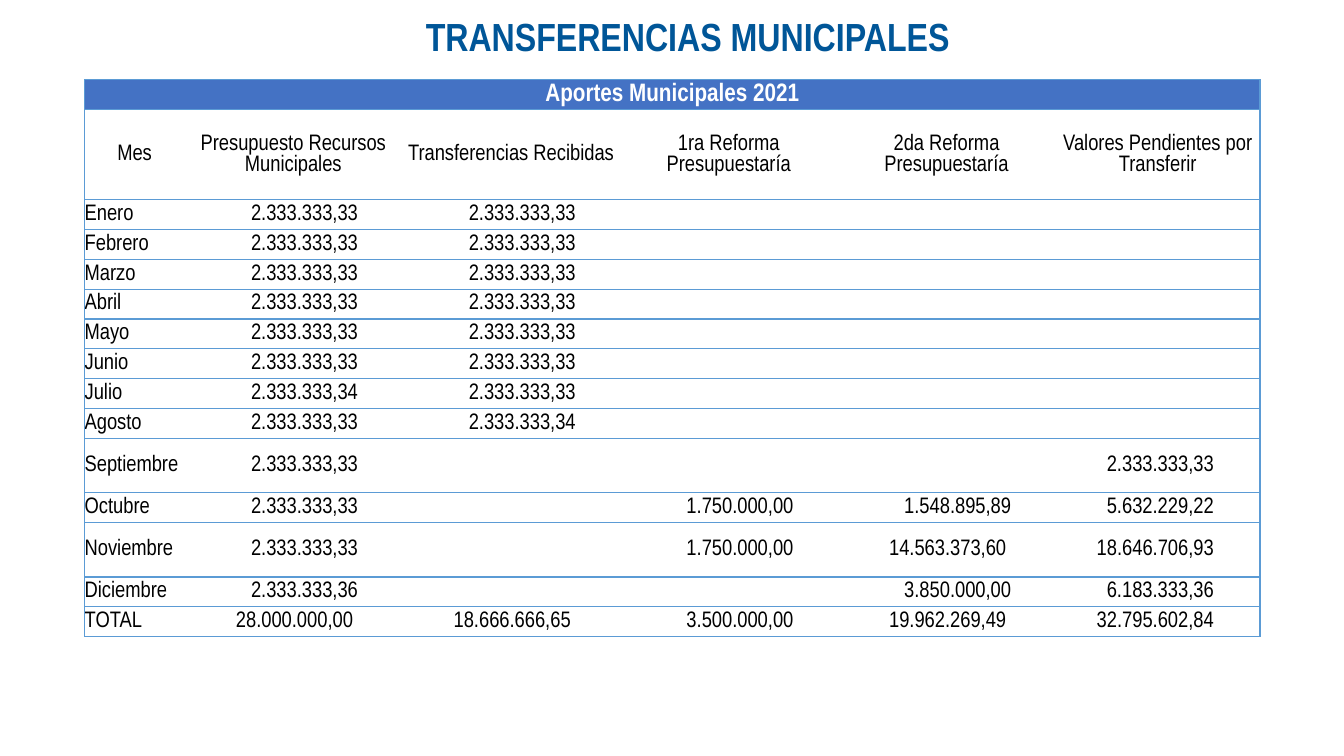
from pptx import Presentation
from pptx.dml.color import RGBColor
from pptx.enum.text import MSO_ANCHOR, MSO_AUTO_SIZE, PP_ALIGN
from pptx.oxml.ns import qn
from pptx.util import Inches, Pt
from lxml.etree import SubElement

NAVY = RGBColor(0x00, 0x56, 0x98)
BLUE = RGBColor(0x44, 0x72, 0xC4)
SKY = RGBColor(0x5B, 0x9B, 0xD5)
WHITE = RGBColor(0xFF, 0xFF, 0xFF)
BLACK = RGBColor(0x00, 0x00, 0x00)

# Shares of the slide's size, in percent
COLS = [7.43] + [16.2] * 4 + [15.23]
LOW, MID, TALL = 3.95, 7.2, 11.87

BAND = "Aportes Municipales 2021"
HEADS = ["Mes", "Presupuesto Recursos Municipales", "Transferencias Recibidas",
         "1ra Reforma Presupuestaría", "2da Reforma Presupuestaría",
         "Valores Pendientes por Transferir"]
PART = "2.333.333,33"
MONTHS = [
    *[[name, PART, PART, "", "", ""]
      for name in ("Enero", "Febrero", "Marzo", "Abril", "Mayo", "Junio")],
    ["Julio", "2.333.333,34", PART, "", "", ""],
    ["Agosto", PART, "2.333.333,34", "", "", ""],
    ["Septiembre", PART, "", "", "", PART],
    ["Octubre", PART, "", "1.750.000,00", "1.548.895,89", "5.632.229,22"],
    ["Noviembre", PART, "", "1.750.000,00", "14.563.373,60", "18.646.706,93"],
    ["Diciembre", "2.333.333,36", "", "", "3.850.000,00", "6.183.333,36"],
    ["TOTAL", "28.000.000,00", "18.666.666,65", "3.500.000,00",
     "19.962.269,49", "32.795.602,84"],
]


class Deck:
    font = "Arial Narrow"

    def __init__(self):
        self.prs = Presentation()
        self.prs.slide_width = Inches(13.33)
        self.prs.slide_height = Inches(7.5)
        self.slide = self.prs.slides.add_slide(self.prs.slide_layouts[6])

    def across(self, share):
        return round(self.prs.slide_width * share / 100)

    def down(self, share):
        return round(self.prs.slide_height * share / 100)

    def area(self, left, top, width, height):
        return (self.across(left), self.down(top),
                self.across(width), self.down(height))

    def label(self, frame, text, size, color, bold=False, align=PP_ALIGN.CENTER):
        frame.text = text
        para = frame.paragraphs[0]
        para.alignment = align
        for run in para.runs:
            run.font.name = self.font
            run.font.size = Pt(size)
            run.font.bold = bold
            run.font.color.rgb = color
        if not text:
            SubElement(para._p, qn("a:endParaRPr"), sz=str(size * 100))
        return para

    def title(self, text, *area):
        box = self.slide.shapes.add_textbox(*self.area(*area))
        box.text_frame.word_wrap = True
        box.text_frame.auto_size = MSO_AUTO_SIZE.SHAPE_TO_FIT_TEXT
        self.label(box.text_frame, text, 28, NAVY, True)

    def table(self, left, top, cols, rows):
        area = self.area(left, top, sum(cols), sum(rows))
        grid = self.slide.shapes.add_table(len(rows), len(cols), *area).table
        for col, share in zip(grid.columns, cols):
            col.width = self.across(share)
        for row, share in zip(grid.rows, rows):
            row.height = self.down(share)
        return grid

    def cell(self, cell, text, fill, sides, size=16, color=BLACK, bold=False,
             align=PP_ALIGN.CENTER, indent=0):
        cell.margin_left = cell.margin_right = 0
        cell.margin_top = cell.margin_bottom = 0
        cell.vertical_anchor = MSO_ANCHOR.MIDDLE
        para = self.label(cell.text_frame, text, size, color, bold, align)
        if indent:
            props = para._p.get_or_add_pPr()
            props.set("marL", str(Inches(indent)))
            props.set("indent", "0")
        self.edge(cell, sides)
        cell.fill.solid()
        cell.fill.fore_color.rgb = fill

    def edge(self, cell, sides):
        """Draw the named sides (L, R, T, B) and leave the others blank."""
        props = cell._tc.get_or_add_tcPr()
        for side in "LRTB":
            line = SubElement(props, qn(f"a:ln{side}"), w=str(Pt(1)))
            if side in sides:
                fill = SubElement(line, qn("a:solidFill"))
                SubElement(fill, qn("a:srgbClr"), val=str(SKY))
            else:
                SubElement(line, qn("a:noFill"))


def inset(text, col):
    """Left indent of an amount: longer numbers and the last column start sooner."""
    long = len(text) > len(PART)
    if col == len(COLS) - 1:
        return 0.41 if long else 0.51
    return 0.51 if long else 0.66


def main():
    deck = Deck()
    deck.title("TRANSFERENCIAS MUNICIPALES", 20.78, 0.93, 60.77, 7.6)
    rows = [LOW, TALL] + [MID if month[0] in ("Septiembre", "Noviembre") else LOW
                          for month in MONTHS]
    grid = deck.table(6.3, 10.53, COLS, rows)
    last = len(COLS) - 1
    grid.cell(0, 0).merge(grid.cell(0, last))
    for col in range(len(COLS)):
        sides = "TB" + "L" * (col == 0) + "R" * (col == last)
        deck.cell(grid.cell(0, col), "" if col else BAND, BLUE,
                  sides if col else "LRTB", 18, WHITE, True)
        deck.cell(grid.cell(1, col), HEADS[col], WHITE, sides)
        for row, month in enumerate(MONTHS, 2):
            text = month[col]
            deck.cell(grid.cell(row, col), text, WHITE, sides, align=PP_ALIGN.LEFT,
                      indent=inset(text, col) if col and text else 0)
    deck.prs.save("out.pptx")


if __name__ == "__main__":
    main()
